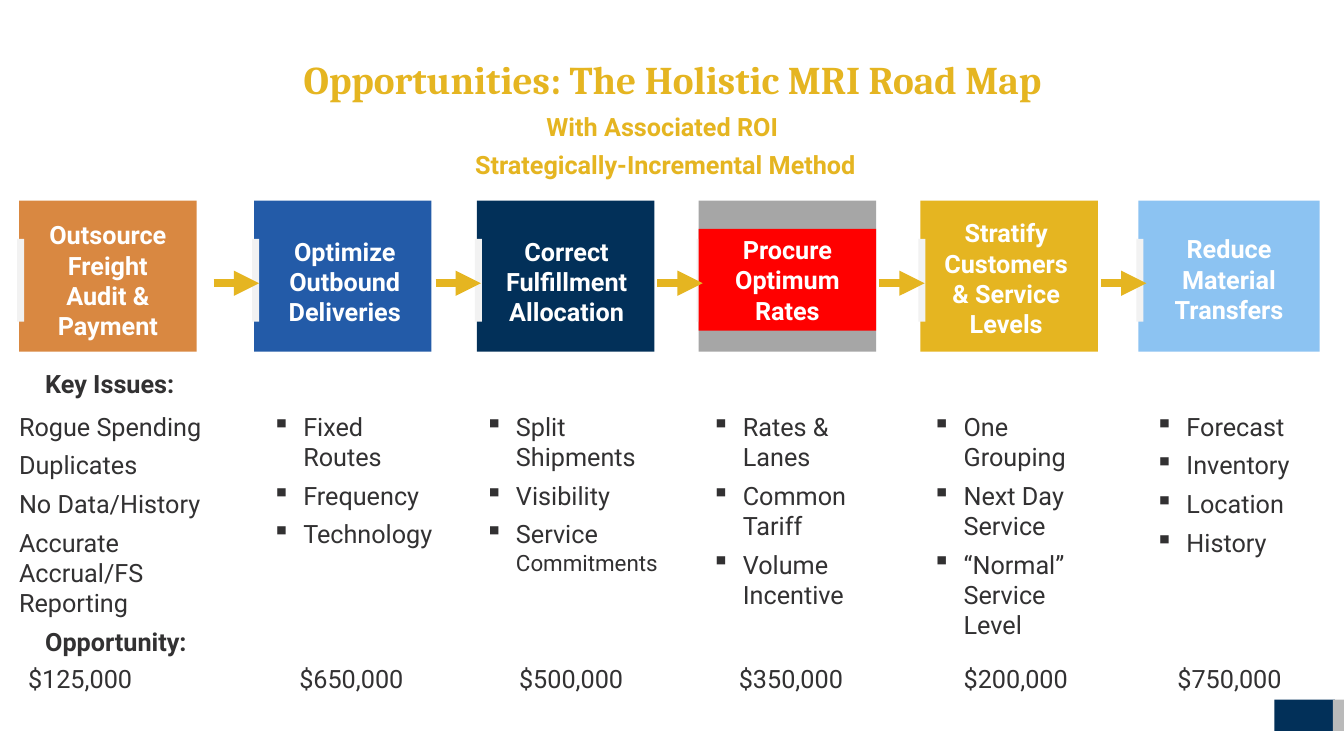
from lxml import etree
from pptx import Presentation
from pptx.dml.color import RGBColor
from pptx.enum.shapes import MSO_CONNECTOR, MSO_SHAPE
from pptx.enum.text import MSO_ANCHOR, PP_ALIGN
from pptx.oxml.ns import qn
from pptx.util import Inches, Pt

RECT, STRAIGHT = MSO_SHAPE.RECTANGLE, MSO_CONNECTOR.STRAIGHT
LEFT, CENTER = PP_ALIGN.LEFT, PP_ALIGN.CENTER
TOP, MIDDLE = MSO_ANCHOR.TOP, MSO_ANCHOR.MIDDLE

COLORS = {
    "gold": "E5B521", "navy": "023059", "blue": "235BA8", "sky": "8CC3F2",
    "orange": "D98841", "red": "FF0000", "gray": "A6A6A6", "silver": "BABABA",
    "strip": "F2F2F2", "white": "FFFFFF", "ink": "323132",
}

# Horizontal bands of the road map
BOX_TOP, BOX_H, BOX_W = 1.99, 1.5, 1.76
STRIP_W, STRIP_H = 0.07, 0.82
ARROW_LEFT, ARROW_PITCH, ARROW_W, ARROW_Y = 2.12, 2.2, 0.45, 2.81
ISSUES_TOP, AMOUNT_TOP, LINE_H = 4.03, 6.53, 0.4

# left, width, color, label (left, top, lines), issues (left, width, items), amount (left, text)
STEPS = [
    (0.19, BOX_W, "orange", (0.19, 2.13, ["Outsource", "Freight", "Audit & Payment"]),
     (0.09, 2.15, ["Rogue Spending", "Duplicates", "No Data/History",
                   "Accurate Accrual/FS Reporting"]), (0.18, "$125,000")),
    (2.52, BOX_W, "blue", (2.54, 2.29, ["Optimize", "Outbound", "Deliveries"]),
     (2.6, 1.83, ["Fixed Routes", "Frequency", "Technology"]), (2.87, "$650,000")),
    (4.73, BOX_W, "navy", (4.74, 2.29, ["Correct Fulfillment Allocation"]),
     (4.71, 2.03, ["Split Shipments", "Visibility", "Service |Commitments"]),
     (5.05, "$500,000")),
    (6.93, BOX_W, "gray", (6.93, 2.27, ["Procure", "Optimum", "Rates"]),
     (6.96, 1.97, ["Rates & Lanes", "Common Tariff", "Volume Incentive"]),
     (7.23, "$350,000")),
    (9.13, BOX_W, "gold", (9.1, 2.11, ["Stratify Customers", "& Service", "Levels"]),
     (9.15, 1.83, ["One Grouping", "Next Day Service", "“Normal” Service Level"]),
     (9.46, "$200,000")),
    (11.29, 1.8, "sky", (11.29, 2.27, ["Reduce", "Material", "Transfers"]),
     (11.36, 1.87, ["Forecast", "Inventory", "Location", "History"]),
     (11.58, "$750,000")),
]

prs = Presentation()
prs.slide_width, prs.slide_height = Inches(13.33), Inches(7.5)
slide = prs.slides.add_slide(prs.slide_layouts[5])


def write(lines, left, top, width, height, box=None, size=18, font="Roboto", color="ink",
          bold=False, align=LEFT, after=6, bullet=None, anchor=TOP):
    """Write one paragraph per line; the part after a bar is set 2 pt smaller."""
    place = [Inches(v) for v in (left, top, width, height)]
    box = box or slide.shapes.add_textbox(*place)
    box.left, box.top, box.width, box.height = place
    frame = box.text_frame
    frame.word_wrap = True
    frame.vertical_anchor = anchor
    frame.margin_left = frame.margin_right = Inches(0.1)
    frame.margin_top = frame.margin_bottom = Inches(0.05)
    for i, line in enumerate(lines):
        para = frame.paragraphs[0] if i == 0 else frame.add_paragraph()
        para.alignment = align
        para.space_before, para.space_after = Pt(0), Pt(after)
        if bullet:
            props = para._p.get_or_add_pPr()
            props.set("marL", str(Inches(0.31)))
            props.set("indent", str(-Inches(0.31)))
            etree.SubElement(props, qn("a:buChar")).set("char", bullet)
        for j, part in enumerate(line.split("|")):
            run = para.add_run()
            run.text = part
            run.font.name, run.font.size, run.font.bold = font, Pt(size - 2 * j), bold
            run.font.color.rgb = RGBColor.from_string(COLORS[color])


def block(left, top, width, height, color):
    shape = slide.shapes.add_shape(RECT, *[Inches(v) for v in (left, top, width, height)])
    shape.shadow.inherit = False
    shape.fill.solid()
    shape.fill.fore_color.rgb = RGBColor.from_string(COLORS[color])
    shape.line.fill.background()
    return shape


# Corner marks
block(12.64, 6.94, 0.6, 0.31, "navy")
block(13.22, 6.94, 0.11, 0.31, "silver")

# Title and subtitle
write(["Opportunities: The Holistic MRI Road Map"], 1.07, 0.5, 11.2, 0.57,
      box=slide.shapes.title, size=28, font="Cambria", color="gold", bold=True,
      align=CENTER, after=0)
write(["With Associated ROI ", "Strategically-Incremental Method"], 2.73, 1.05, 7.74, 0.79,
      color="gold", bold=True, align=CENTER)

# Steps with their issues and amounts
for number, (left, width, color, label, issues, amount) in enumerate(STEPS):
    block(left, BOX_TOP, width, BOX_H, color)
    block(left - 0.02, BOX_TOP + (BOX_H - STRIP_H) / 2 + 0.04, STRIP_W, STRIP_H, "strip")

    label_left, label_top, label_lines = label
    label_h = 1.31 if label_top < 2.2 else 1.01
    band = block(label_left, label_top, width, label_h, "red") if color == "gray" else None
    write(label_lines, label_left, label_top, width, label_h, box=band, color="white",
          bold=True, align=CENTER, after=0, anchor=MIDDLE if band else TOP)

    issues_left, issues_w, items = issues
    write(items, issues_left, ISSUES_TOP, issues_w, 2.17, bullet="▪" if number else None)
    amount_left, amount_text = amount
    write([amount_text], amount_left, AMOUNT_TOP, 1.7, LINE_H)

# Row headings
for heading, top in (("Key Issues:", 3.61), ("Opportunity:", 6.16)):
    write([heading], 0.35, top, 2.44, LINE_H, bold=True)

# Arrows between the steps
for gap in range(len(STEPS) - 1):
    start = ARROW_LEFT + gap * ARROW_PITCH
    arrow = slide.shapes.add_connector(STRAIGHT, Inches(start), Inches(ARROW_Y),
                                       Inches(start + ARROW_W), Inches(ARROW_Y))
    arrow.line.color.rgb = RGBColor.from_string(COLORS["gold"])
    arrow.line.width = Pt(6)
    etree.SubElement(arrow.line._get_or_add_ln(), qn("a:tailEnd")).set("type", "triangle")
    etree.SubElement(arrow._element.spPr, qn("a:effectLst"))

prs.save("out.pptx")
